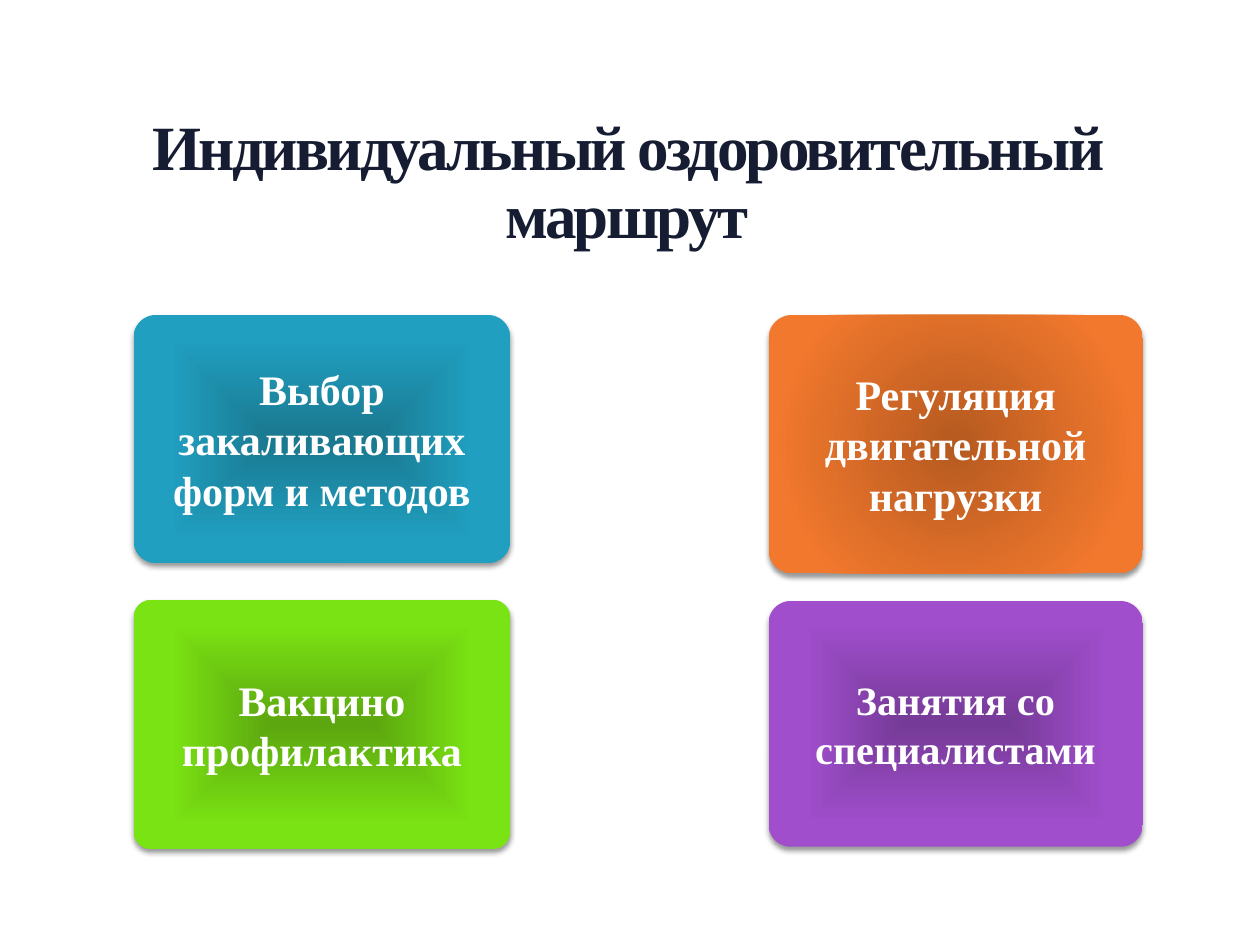
from lxml.etree import SubElement
from pptx import Presentation
from pptx.dml.color import RGBColor
from pptx.enum.shapes import MSO_SHAPE
from pptx.enum.text import MSO_ANCHOR, PP_ALIGN
from pptx.oxml import parse_xml
from pptx.oxml.ns import nsdecls, qn
from pptx.util import Inches, Pt

FONT = "Times New Roman"
TITLE = "Индивидуальный оздоровительный маршрут"
LEFT, RIGHT = (1.06, 2.99), (6.1, 2.97)  # column left and width

# column, top, height, corner, gradient shape, centre colour, edge colour, size, lines
CARDS = [
    (RIGHT, 2.5, 2.05, 0.09, "circle", "B55A20", "F2782D", 24,
     ["Регуляция двигательной нагрузки"]),
    (LEFT, 2.5, 1.97, 0.09, "rect", "1A788F", "209FC0", 24,
     ["Выбор закаливающих форм и методов"]),
    (RIGHT, 4.77, 1.95, 0.09, "rect", "753A97", "A04ECC", 23,
     ["Занятия со специалистами"]),
    (LEFT, 4.76, 1.98, 0.07, "rect", "5CA60F", "7AE313", 24,
     ["Вакцино", "профилактика"]),
]


def color(value):
    return RGBColor.from_string(value)


def write(frame, lines, size, fill="FFFFFF", spacing=None, tracking=None):
    frame.word_wrap = True
    for index, line in enumerate(lines):
        paragraph = frame.paragraphs[0] if index == 0 else frame.add_paragraph()
        paragraph.alignment = PP_ALIGN.CENTER
        if spacing:
            paragraph.line_spacing = spacing
        run = paragraph.add_run()
        run.text = line
        run.font.name, run.font.size, run.font.bold = FONT, Pt(size), True
        run.font.color.rgb = color(fill)
        if tracking:
            run.font._element.set("spc", str(int(tracking * 100)))


def fill_from_centre(shape, kind, centre, edge):
    stops = "".join(
        f'<a:gs pos="{position * 1000}"><a:srgbClr val="{value}"/></a:gs>'
        for position, value in ((0, centre), (80, edge), (100, edge)))
    shape.fill.background()
    properties = shape._element.spPr
    old_fill = properties.find(qn("a:noFill"))
    properties.replace(old_fill, parse_xml(
        f'<a:gradFill {nsdecls("a")} rotWithShape="1"><a:gsLst>{stops}</a:gsLst>'
        f'<a:path path="{kind}"><a:fillToRect l="50000" t="50000" r="50000" b="50000"/>'
        '</a:path></a:gradFill>'))


def add_soft_shadow(shape):
    shape.shadow.inherit = False
    effects = shape._element.spPr.find(qn("a:effectLst"))
    shadow = SubElement(effects, qn("a:outerShdw"), blurRad=str(Inches(0.04)),
                        dist=str(Inches(0.03)), dir="5400000", rotWithShape="0")
    black = SubElement(shadow, qn("a:srgbClr"), val="000000")
    SubElement(black, qn("a:alpha"), val="40000")


presentation = Presentation()
presentation.slide_width, presentation.slide_height = Inches(10), Inches(7.5)
slide = presentation.slides.add_slide(presentation.slide_layouts[6])

# Title
title = slide.shapes.add_textbox(Inches(0.39), Inches(0.92), Inches(9.17), Inches(1.26))
frame = title.text_frame
frame.margin_left = frame.margin_top = frame.margin_right = frame.margin_bottom = 0
write(frame, [TITLE], 36, fill="161D32", spacing=0.9, tracking=-1.5)

# Cards
for (left, width), top, height, corner, kind, centre, edge, size, lines in CARDS:
    card = slide.shapes.add_shape(MSO_SHAPE.ROUNDED_RECTANGLE, Inches(left), Inches(top),
                                  Inches(width), Inches(height))
    card.adjustments[0] = corner
    card.line.fill.background()
    fill_from_centre(card, kind, centre, edge)
    add_soft_shadow(card)
    card.text_frame.vertical_anchor = MSO_ANCHOR.MIDDLE
    write(card.text_frame, lines, size)

presentation.save("out.pptx")
